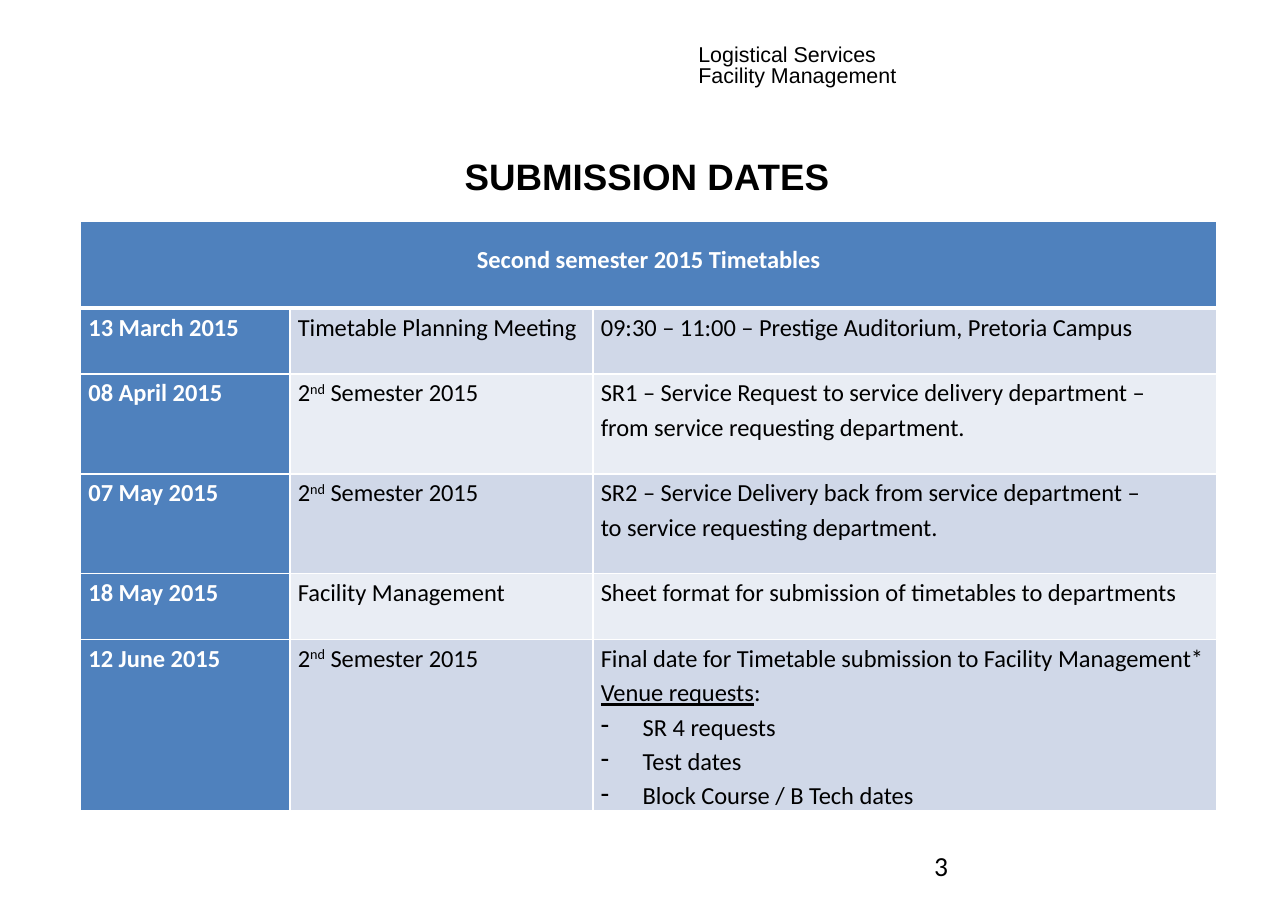
from lxml.etree import SubElement
from pptx import Presentation
from pptx.dml.color import RGBColor
from pptx.enum.text import MSO_ANCHOR, PP_ALIGN
from pptx.oxml.ns import qn
from pptx.util import Pt

BLUE, DARK_BAND, LIGHT_BAND = "4F81BD", "D0D8E8", "E9EDF4"
WHITE, BLACK = "FFFFFF", "000000"
COLUMN_WIDTHS = [136.8, 198, 407.5]
ROW_HEIGHTS = [56.5, 43, 65.3, 65.3, 43, 112]
SEMESTER = [[("2", {}), ("nd", {"superscript": True}), (" Semester 2015", {})]]
SUBMISSIONS = [
    ("13 March 2015", ["Timetable Planning Meeting"],
     ["09:30 – 11:00 – Prestige Auditorium, Pretoria Campus"]),
    ("08 April 2015", SEMESTER,
     ["SR1 – Service Request to service delivery department –",
      "from service requesting department."]),
    ("07 May 2015", SEMESTER,
     ["SR2 – Service Delivery back from service department –",
      "to service requesting department."]),
    ("18 May 2015", ["Facility Management"],
     ["Sheet format for submission of timetables to departments"]),
    ("12 June 2015", SEMESTER,
     ["Final date for Timetable submission to Facility Management*",
      [("Venue requests", {"underline": True}), (":", {})]]),
]
VENUE_REQUESTS = ["SR 4 requests", "Test dates", "Block Course / B Tech dates"]


def color(value):
    return RGBColor.from_string(value)


class SlideBuilder:
    """Holds the slide and its text style and adds text boxes and tables."""

    def __init__(self, slide, font="Calibri", size=16):
        self.slide = slide
        self.font = font
        self.size = size

    def add_run(self, paragraph, text, fill=BLACK, bold=False, font=None, size=None,
                underline=False, superscript=False):
        run = paragraph.add_run()
        run.text = text
        run.font.name = font or self.font
        run.font.size = Pt(size or self.size)
        run.font.bold = bold
        run.font.color.rgb = color(fill)
        if underline:
            run.font.underline = True
        if superscript:
            run._r.get_or_add_rPr().set("baseline", "30000")

    def add_lines(self, frame, lines, bullets=(), align=PP_ALIGN.LEFT, spacing=None,
                  gap=0, **style):
        for index, line in enumerate([*lines, *bullets]):
            paragraph = frame.add_paragraph() if index else frame.paragraphs[0]
            paragraph.alignment = align
            if spacing:
                paragraph.line_spacing = spacing
            if index and gap:
                paragraph.space_before = Pt(gap)
            if index >= len(lines):
                self.add_dash(paragraph)
            for text, changes in [(line, {})] if isinstance(line, str) else line:
                self.add_run(paragraph, text, **{**style, **changes})

    def add_dash(self, paragraph, indent=27.4):
        properties = paragraph._p.get_or_add_pPr()
        properties.set("marL", str(Pt(indent)))
        properties.set("indent", str(-Pt(indent)))
        SubElement(properties, qn("a:buChar"), char="-")

    def add_text(self, left, top, width, height, lines, anchor=MSO_ANCHOR.TOP, **style):
        box = self.slide.shapes.add_textbox(Pt(left), Pt(top), Pt(width), Pt(height))
        box.text_frame.word_wrap = True
        box.text_frame.vertical_anchor = anchor
        self.add_lines(box.text_frame, lines, **style)

    def add_table(self, left, top, widths, heights):
        table = self.slide.shapes.add_table(
            len(heights), len(widths), Pt(left), Pt(top),
            Pt(sum(widths)), Pt(sum(heights))).table
        for column, width in zip(table.columns, widths):
            column.width = Pt(width)
        for row, height in zip(table.rows, heights):
            row.height = Pt(height)
        return table

    def style_cell(self, cell, fill, top_line=1, bottom_line=1, top_margin=0):
        cell.margin_left = cell.margin_right = Pt(5)
        cell.margin_top, cell.margin_bottom = Pt(top_margin), Pt(0)
        properties = cell._tc.get_or_add_tcPr()
        for side, width in zip("LRTB", (1, 1, top_line, bottom_line)):
            line = SubElement(properties, qn(f"a:ln{side}"), w=str(Pt(width)))
            SubElement(SubElement(line, qn("a:solidFill")), qn("a:srgbClr"), val=WHITE)
        cell.fill.solid()
        cell.fill.fore_color.rgb = color(fill)


def add_submission_table(builder):
    table = builder.add_table(52.8, 145, COLUMN_WIDTHS, ROW_HEIGHTS)
    heading = table.cell(0, 0)
    heading.merge(table.cell(0, 2))
    for cell in table.rows[0].cells:
        builder.style_cell(cell, BLUE, bottom_line=3, top_margin=12.4)
    builder.add_lines(heading.text_frame, ["Second semester 2015 Timetables"],
                      align=PP_ALIGN.CENTER, spacing=1.15, fill=WHITE, bold=True)
    for row, (date, subject, details) in enumerate(SUBMISSIONS, 1):
        band = DARK_BAND if row % 2 else LIGHT_BAND
        for column, lines in enumerate([[date], subject, details]):
            cell = table.cell(row, column)
            is_date = column == 0
            builder.style_cell(cell, BLUE if is_date else band,
                               top_line=3 if row == 1 else 1)
            is_last = row == len(SUBMISSIONS) and column == 2
            builder.add_lines(cell.text_frame, lines, VENUE_REQUESTS if is_last else (),
                              spacing=1.15, fill=WHITE if is_date else BLACK,
                              bold=is_date)


def main():
    presentation = Presentation()
    presentation.slide_width, presentation.slide_height = Pt(841.68), Pt(595.44)
    builder = SlideBuilder(presentation.slides.add_slide(presentation.slide_layouts[6]))
    builder.add_text(449.3, 28.5, 362.9, 36.7,
                     ["Logistical Services", "Facility Management"],
                     font="Arial", size=14, spacing=Pt(11.3), gap=2.8)
    builder.add_text(52.6, 87.8, 740.2, 54.7, ["SUBMISSION DATES"], MSO_ANCHOR.MIDDLE,
                     align=PP_ALIGN.CENTER, font="Arial", size=24, bold=True)
    add_submission_table(builder)
    builder.add_text(603.4, 551.5, 196.6, 31.7, ["3"], size=18)
    presentation.save("out.pptx")


if __name__ == "__main__":
    main()
